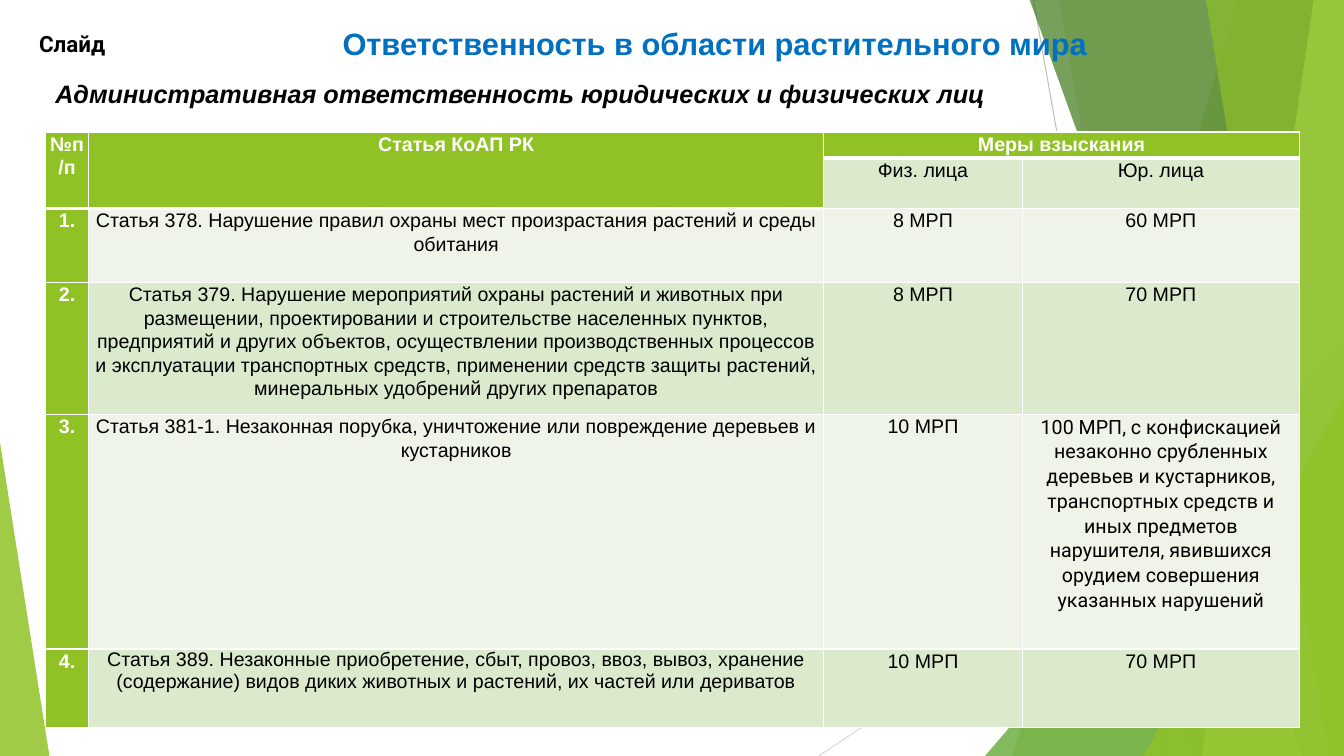
from lxml import etree
from pptx import Presentation
from pptx.dml.color import RGBColor
from pptx.enum.dml import MSO_THEME_COLOR
from pptx.enum.shapes import MSO_CONNECTOR, MSO_SHAPE
from pptx.enum.text import MSO_AUTO_SIZE, PP_ALIGN
from pptx.oxml.ns import qn
from pptx.util import Inches, Pt

STRAIGHT = MSO_CONNECTOR.STRAIGHT
TRIANGLE = MSO_SHAPE.ISOSCELES_TRIANGLE
LEFT, CENTER, JUSTIFY = PP_ALIGN.LEFT, PP_ALIGN.CENTER, PP_ALIGN.JUSTIFY
GROW = MSO_AUTO_SIZE.SHAPE_TO_FIT_TEXT

WIDTH, HEIGHT, TOP = 13.33, 7.5, -0.01
GREEN, WHITE, BLACK = "90C226", "FFFFFF", "000000"
BANDS = ("DBE9CD", "EEF4E8")

COLUMNS = (0.43, 7.29, 1.97, 2.75)
ROWS = (0.26, 0.49, 0.73, 1.31, 2.33, 0.78)
CONTENT = (
    ("№п/п", "Статья КоАП РК", "Меры взыскания", ""),
    ("", "", "Физ. лица", "Юр. лица"),
    ("1.", "Статья 378. Нарушение правил охраны мест произрастания растений "
     "и среды обитания", "8 МРП", "60 МРП"),
    ("2.", "Статья 379. Нарушение мероприятий охраны растений и животных при "
     "размещении, проектировании и строительстве населенных пунктов, "
     "предприятий и других объектов, осуществлении производственных процессов "
     "и эксплуатации транспортных средств, применении средств защиты растений, "
     "минеральных удобрений других препаратов", "8 МРП", "70 МРП"),
    ("3.", "Статья 381-1. Незаконная порубка, уничтожение или повреждение "
     "деревьев и кустарников", "10 МРП",
     "100 МРП, с конфискацией незаконно срубленных деревьев и кустарников, "
     "транспортных средств и иных предметов нарушителя, явившихся орудием "
     "совершения указанных нарушений"),
    ("4.", "Статья 389. Незаконные приобретение, сбыт, провоз, ввоз, вывоз, "
     "хранение (содержание) видов диких животных и растений, их частей или "
     "дериватов", "10 МРП", "70 МРП"),
)
SANCTION_CELL = (4, 3)


def rgb(color):
    return RGBColor.from_string(color)


def set_attrs(obj, values):
    for name, value in values.items():
        setattr(obj, name, value)


def paint(sp, color, opacity):
    sp.shadow.inherit = False
    sp.line.fill.background()
    sp.fill.solid()
    sp.fill.fore_color.rgb = rgb(color)
    clr = sp.fill._xPr.find(qn("a:solidFill"))[0]
    etree.SubElement(clr, qn("a:alpha"), val=str(opacity * 1000))


def add_line(s, start, end, color):
    sp = s.shapes.add_connector(STRAIGHT, *map(Inches, start + end))
    sp.line.color.rgb = rgb(color)
    sp.line.width = Pt(0.75)
    etree.SubElement(sp._element.spPr, qn("a:effectLst"))


def add_band(s, top_x, bottom_x, color, opacity):
    points = [(Inches(x), Inches(y)) for x, y in (
        (top_x, TOP), (WIDTH, TOP), (WIDTH, HEIGHT), (bottom_x, HEIGHT))]
    builder = s.shapes.build_freeform(*points[0])
    builder.add_line_segments(points[1:], close=True)
    paint(builder.convert_to_shape(), color, opacity)


def add_triangle(s, left, top, width, apex, color, opacity):
    sp = s.shapes.add_shape(TRIANGLE, *map(Inches, (left, top, width, HEIGHT - top)))
    sp.adjustments[0] = apex
    paint(sp, color, opacity)


def write(tf, text, size, color, align, font="Arial", bold=True, italic=False):
    p = tf.paragraphs[0]
    p.alignment = align
    r = p.add_run()
    r.text = text
    set_attrs(r.font, {"size": Pt(size), "name": font, "bold": bold, "italic": italic})
    r.font.color.rgb = rgb(color)
    return p


def add_text(s, box, text, size, color, align, **style):
    tf = s.shapes.add_textbox(*map(Inches, box)).text_frame
    set_attrs(tf, {"word_wrap": True, "auto_size": GROW})
    write(tf, text, size, color, align, **style)


def add_border(cell, side, width):
    ln = etree.SubElement(cell._tc.get_or_add_tcPr(), qn(f"a:ln{side}"), w=str(Pt(width)))
    fill = etree.SubElement(ln, qn("a:solidFill"))
    etree.SubElement(fill, qn("a:srgbClr"), val=WHITE)


def format_cell(cell, row, col):
    heading = row == 0 or col == 0 or (row == 1 and col == 1)
    set_attrs(cell, {"margin_left": Inches(0.03), "margin_right": Inches(0.03),
                     "margin_top": 0, "margin_bottom": 0})
    for side in "LRTB" if row == 0 else "LRB":
        add_border(cell, side, 3 if side == "B" and heading and row < 2 else 1)
    cell.fill.solid()
    cell.fill.fore_color.rgb = rgb(GREEN if heading else BANDS[(row + 1) % 2])
    text = CONTENT[row][col]
    if text:
        font = "Roboto" if (row, col) == SANCTION_CELL else "Arial"
        p = write(cell.text_frame, text, 14, WHITE if heading else BLACK, CENTER,
                  font=font, bold=heading)
        p.line_spacing = 1.0 if (row, col) == (5, 1) else 1.07


def add_penalty_table(s):
    box = (0.45, 1.31, sum(COLUMNS), sum(ROWS))
    table = s.shapes.add_table(len(ROWS), len(COLUMNS), *map(Inches, box)).table
    for column, width in zip(table.columns, COLUMNS):
        column.width = Inches(width)
    for row, height in enumerate(ROWS):
        table.rows[row].height = Inches(height)
        for col in range(len(COLUMNS)):
            format_cell(table.cell(row, col), row, col)
    for start, end in (((0, 0), (1, 0)), ((0, 1), (1, 1)), ((0, 2), (0, 3))):
        table.cell(*start).merge(table.cell(*end))


def add_backdrop(s):
    add_line(s, (10.25, 0), (11.58, HEIGHT), "BFBFBF")
    add_line(s, (WIDTH, 4.03), (8.12, HEIGHT), "D9D9D9")
    add_band(s, 12.28, 10.04, GREEN, 30)
    add_band(s, 10.5, 11.83, GREEN, 20)
    add_triangle(s, 9.77, 3.33, 3.56, 1, "54A021", 72)
    add_band(s, 10.21, 12.91, "3F7819", 70)
    add_band(s, 13.03, 11.92, "C0E474", 70)
    add_band(s, 11.96, 13.18, GREEN, 65)
    add_triangle(s, 11.34, 3.93, 1.99, 1, GREEN, 80)
    add_triangle(s, 0, 4.39, 0.49, 0, GREEN, 85)


def main():
    prs = Presentation()
    set_attrs(prs, {"slide_width": Inches(WIDTH), "slide_height": Inches(HEIGHT)})
    s = prs.slides.add_slide(prs.slide_layouts[6])
    s.background.fill.solid()
    s.background.fill.fore_color.theme_color = MSO_THEME_COLOR.BACKGROUND_1
    add_backdrop(s)
    add_text(s, (2.99, 0.2, 8.2, 0.47), "Ответственность в области растительного мира",
             22, "0070C0", CENTER)
    add_text(s, (0.45, 0.73, 10, 0.71),
             "Административная ответственность юридических и физических лиц",
             18, BLACK, JUSTIFY, italic=True)
    add_text(s, (0.29, 0.25, 1.2, 0.37), "Слайд", 16, BLACK, LEFT, font="Roboto")
    add_penalty_table(s)
    prs.save("out.pptx")


if __name__ == "__main__":
    main()
